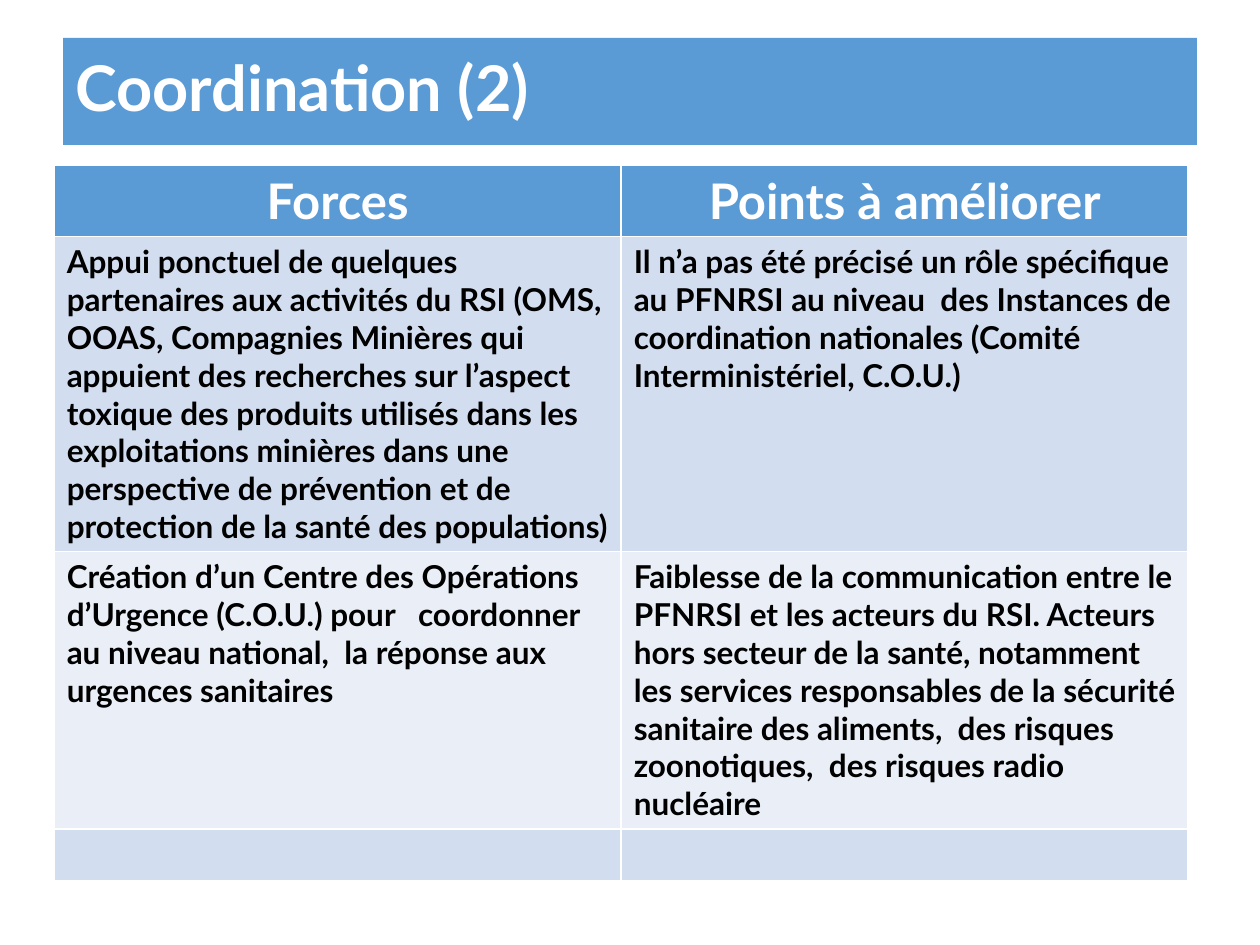
"""Build the "Coordination (2)" slide: a title band above a table of strengths and points to improve."""
from pptx import Presentation
from pptx.dml.color import RGBColor
from pptx.enum import text
from pptx.util import Inches, Pt


def paint(fill, color):
    fill.solid()
    fill.fore_color.rgb = RGBColor.from_string(color)


def write(tf, content, size, color, align, spacing=1.0):
    p = tf.paragraphs[0]
    p.alignment, p.line_spacing = align, spacing
    r = p.add_run()
    r.text = content
    for name, value in {"name": "Lato", "size": Pt(size), "bold": True}.items():
        setattr(r.font, name, value)
    r.font.color.rgb = RGBColor.from_string(color)


BLUE, PALE, LIGHT, WHITE, BLACK = "5B9BD5", "D2DEEF", "EAEFF7", "FFFFFF", "000000"
LEFT, CENTER = text.PP_ALIGN.LEFT, text.PP_ALIGN.CENTER

prs = Presentation()
prs.slide_width, prs.slide_height = Inches(10), Inches(7.5)
s = prs.slides.add_slide(prs.slide_layouts[5])

title = s.shapes.title
place = {"left": 0.5, "top": 0.3, "width": 9, "height": 0.85}
for name, value in place.items():
    setattr(title, name, Inches(value))
paint(title.fill, BLUE)
tf = title.text_frame
frame = {"vertical_anchor": text.MSO_ANCHOR.MIDDLE, "auto_size": text.MSO_AUTO_SIZE.NONE, "word_wrap": True}
for name, value in frame.items():
    setattr(tf, name, value)
write(tf, "Coordination (2)", 36, WHITE, LEFT, 0.9)

rows = [
    (0.56, BLUE, ["Forces", "Points à améliorer"]),
    (2.5, PALE, [
        "Appui ponctuel de quelques partenaires aux activités du RSI (OMS, OOAS, Compagnies Minières "
        "qui appuient des recherches sur l’aspect toxique des produits utilisés dans les exploitations "
        "minières dans une perspective de prévention et de protection de la santé des populations)",
        "Il n’a pas été précisé un rôle spécifique au PFNRSI au niveau  des Instances de coordination "
        "nationales (Comité Interministériel, C.O.U.)",
    ]),
    (2.2, LIGHT, [
        "Création d’un Centre des Opérations d’Urgence (C.O.U.) pour   coordonner au niveau national,  "
        "la réponse aux urgences sanitaires",
        "Faiblesse de la communication entre le PFNRSI et les acteurs du RSI. Acteurs hors secteur de "
        "la santé, notamment  les services responsables de la sécurité sanitaire des aliments,  des "
        "risques zoonotiques,  des risques radio nucléaire",
    ]),
    (0.41, PALE, ["", ""]),
]
height = sum(row[0] for row in rows)
table = s.shapes.add_table(len(rows), 2, Inches(0.43), Inches(1.31), Inches(9), Inches(height)).table
for i, (row_height, color, contents) in enumerate(rows):
    table.rows[i].height = Inches(row_height)
    style = (28, WHITE, CENTER) if i == 0 else (18, BLACK, LEFT)
    for cell, content in zip(table.rows[i].cells, contents):
        paint(cell.fill, color)
        if content:
            write(cell.text_frame, content, *style)

prs.save("out.pptx")
